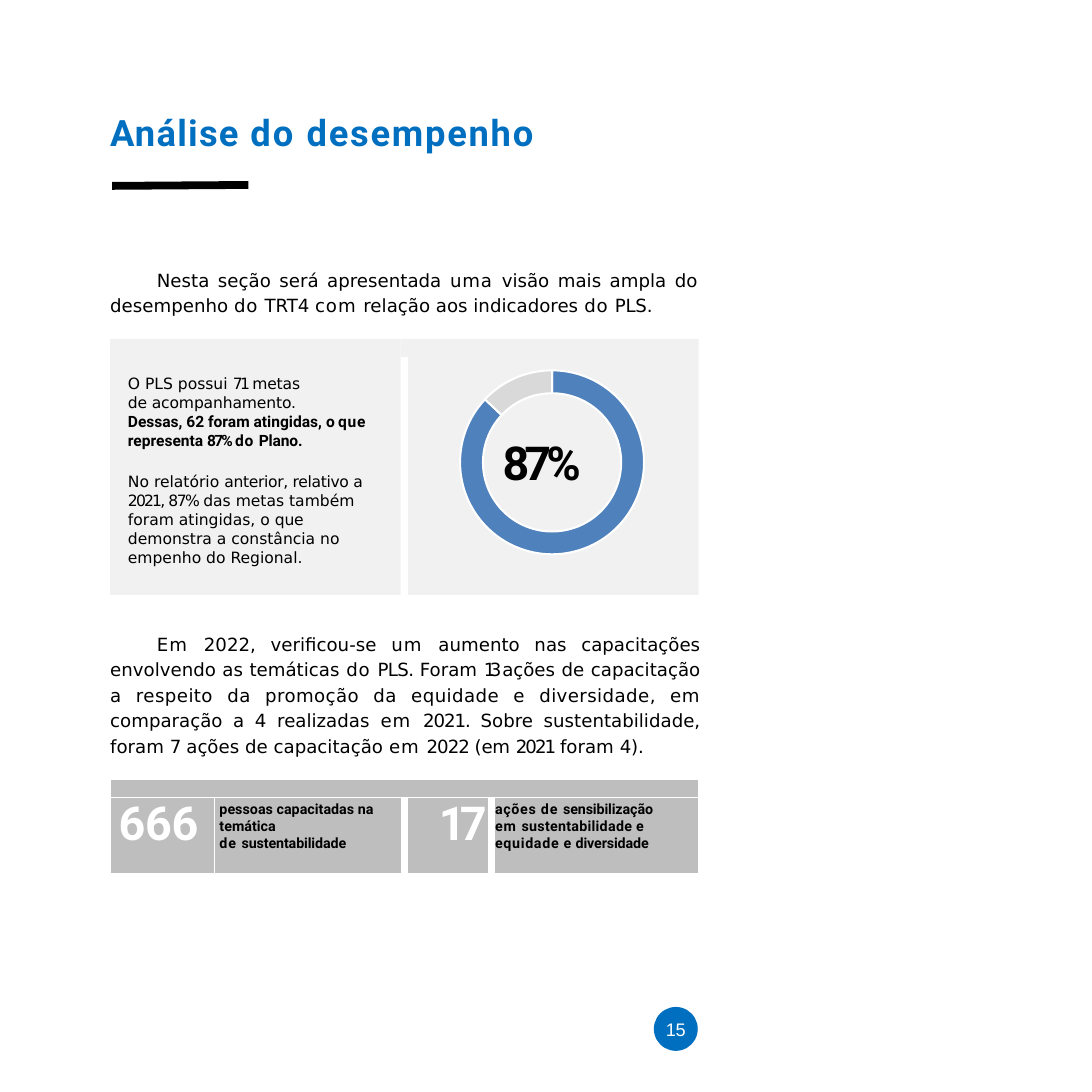
"""Build the performance analysis slide with its doughnut chart and training table."""
from dataclasses import dataclass

from lxml import etree
from pptx import Presentation
from pptx.chart.data import CategoryChartData
from pptx.dml.color import RGBColor
from pptx.enum.chart import XL_CHART_TYPE
from pptx.enum.shapes import MSO_CONNECTOR, MSO_SHAPE
from pptx.enum.text import MSO_ANCHOR, PP_ALIGN
from pptx.oxml import parse_xml
from pptx.oxml.ns import nsdecls, qn
from pptx.util import Inches, Pt

RECT, OVAL = MSO_SHAPE.RECTANGLE, MSO_SHAPE.OVAL
STRAIGHT, DOUGHNUT = MSO_CONNECTOR.STRAIGHT, XL_CHART_TYPE.DOUGHNUT
LEFT, CENTER, JUSTIFY = PP_ALIGN.LEFT, PP_ALIGN.CENTER, PP_ALIGN.JUSTIFY
MIDDLE = MSO_ANCHOR.MIDDLE
COLORS = {"blue": "006FC0", "ring": "4F81BC", "rest": "D9D9D9", "panel": "F1F1F1",
          "band": "BEBEBE", "black": "000000", "white": "FFFFFF"}
BODY, HEAD = "DejaVu Sans", "Roboto"


@dataclass
class Par:
    runs: list[tuple[str, float]]
    size: float
    font: str = BODY
    color: str = "black"
    left: float = 0.01
    right: float = 0
    first: float = 0
    line: float | None = None
    exact: float | None = None
    align: PP_ALIGN = LEFT


@dataclass
class TextBox:
    box: tuple[float, float, float, float]
    pars: list[Par]


@dataclass
class Shape:
    kind: MSO_SHAPE
    box: tuple[float, float, float, float]
    fill: str
    outline: float = 0


PANELS = [Shape(RECT, (1.18, 3.63, 3.11, 2.74), "panel"),
          Shape(RECT, (4.29, 3.63, 0.08, 0.19), "panel"),
          Shape(RECT, (4.37, 3.63, 3.11, 2.74), "panel")]
RING_CENTER = (5.91, 4.95)
RING_SIZE, HOLE_SIZE, RING_SHARE, RING_LINE = 1.97, 1.48, 0.9, 1.56

TEXTS = [
    TextBox((1.17, 1.17, 6.56, 0.49), [
        Par([("Análise ", 1), ("do ", 1.6), ("desempenho", 1.4)], 28, HEAD, "blue")]),
    TextBox((1.17, 2.83, 6.33, 0.57), [
        Par([("Nesta seção será apresentada ", 0), ("uma ", 0.5), ("visão mais ampla do desempenho ", 0),
             ("do ", 0.5), ("TRT4 ", -0.1), ("com ", 0.7), ("relação aos indicadores ", 0),
             ("do ", 0.5), ("PLS.", -0.2)],
            14, right=0.03, first=0.5, line=1.17, align=JUSTIFY)]),
    TextBox((1.36, 3.99, 2.63, 0.84), [
        Par([("O PLS possui ", 0), ("71 ", -2), ("metas de acompanhamento.", -0.1)],
            12, right=0.65, line=1.02),
        Par([("Dessas, 62 foram atingidas, ", 0), ("o ", -0.5), ("que ", 0.6), ("representa ", 0),
             ("87% ", -1.4), ("do ", 0.6), ("Plano.", -0.1)], 12, HEAD, exact=14.6)]),
    TextBox((1.36, 5.04, 2.55, 1.04), [
        Par([("No relatório ", 0), ("anterior, relativo", -0.25), (" a ", -0.5), ("2021, ", -1.4),
             ("87% ", -1.2), ("das metas também foram atingidas, o ", 0), ("que ", -0.2),
             ("demonstra a constância no empenho do Regional.", 0)], 12, line=1.02)]),
    TextBox((1.17, 6.73, 6.33, 1.39), [
        Par([("Em ", 0.8), ("2022, verificou-se ", 0), ("um ", 0.8),
             ("aumento nas capacitações envolvendo as temáticas ", 0), ("do ", 0.5), ("PLS. ", -0.5),
             ("Foram ", 0), ("13 ", -4.3), ("ações de capacitação ", 0),
             ("a respeito da promoção da equidade e diversidade, ", 0.3),
             ("em ", 0.3), ("comparação a 4 realizadas ", 0), ("em ", 0.7), ("2021. ", -0.8),
             ("Sobre sustentabilidade, foram ", 0), ("7 ", -0.7), ("ações de capacitação ", 0),
             ("em ", 0.7), ("2022 ", -0.8), ("(em ", -0.2), ("2021 ", -1.5), ("foram ", 0), ("4).", -0.2)],
            14, first=0.5, line=1.17, align=JUSTIFY)]),
    TextBox((5.37, 4.63, 1.13, 0.63), [Par([("87%", -3.7)], 36, HEAD)]),
]

TABLE_COLS, TABLE_ROWS = (1.12, 2.03, 0.93, 2.22), (0.2, 0.81)
TABLE_CELLS = [
    [Par([("666", -0.2)], 36, HEAD, "white", left=0.09, exact=42)],
    [Par([("pessoas capacitadas na temática", 0)], 11, HEAD, left=0.05, line=1.01),
     Par([("de ", 0.7), ("sustentabilidade", -0.1)], 11, HEAD, left=0.05)],
    [Par([("17", -4.5)], 36, HEAD, "white", left=0.37, exact=42)],
    [Par([("ações ", 0.5), ("de ", 0.7), ("sensibilização ", -0.1), ("em ", 0.7),
          ("sustentabilidade e ", 0.2), ("equidade e", 0.5), (" diversidade", -0.1)],
         11, HEAD, left=0.04, right=0.42, line=1.01)],
]
CELL_BORDERS = {1: ("lnR",), 2: ("lnL", "lnR"), 3: ("lnL",)}


def rgb(name: str) -> RGBColor:
    return RGBColor.from_string(COLORS[name])


def write(tf, pars: list[Par]) -> None:
    for i, par in enumerate(pars):
        p = tf.add_paragraph() if i else tf.paragraphs[0]
        p.alignment = par.align
        if par.exact or par.line:
            p.line_spacing = Pt(par.exact) if par.exact else par.line
        pPr = p._p.get_or_add_pPr()
        for key, value in (("marL", par.left), ("marR", par.right), ("indent", par.first)):
            pPr.set(key, str(Inches(value)))
        p.font.size, p.font.name, p.font.bold = Pt(par.size), par.font, par.font == HEAD
        p.font.color.rgb = rgb(par.color)
        for text, spacing in par.runs:
            r = p.add_run()
            r.text = text
            if spacing:
                r._r.get_or_add_rPr().set("spc", str(round(spacing * 100)))


def add_text(s, item: TextBox) -> None:
    tf = s.shapes.add_textbox(*map(Inches, item.box)).text_frame
    tf.word_wrap = True
    tf.margin_left = tf.margin_right = tf.margin_bottom = 0
    tf.margin_top = Inches(0.01)
    write(tf, item.pars)


def add_shape(s, item: Shape):
    sp = s.shapes.add_shape(item.kind, *map(Inches, item.box))
    sp.shadow.inherit = False
    sp.fill.solid()
    sp.fill.fore_color.rgb = rgb(item.fill)
    if item.outline:
        sp.line.color.rgb = rgb("white")
        sp.line.width = Pt(item.outline)
    else:
        sp.line.fill.background()
    return sp


def centered(size: float) -> tuple[float, float, float, float]:
    x, y = RING_CENTER
    return x - size / 2, y - size / 2, size, size


def add_ring(s) -> None:
    data = CategoryChartData()
    data.categories = ["Atingidas", "Não atingidas"]
    data.add_series("Metas", (87, 13))
    box = map(Inches, centered(RING_SIZE / RING_SHARE))
    chart = s.shapes.add_chart(DOUGHNUT, *box, data).chart
    chart.has_legend = chart.has_title = False
    chart.font.name, chart.font.size = BODY, Pt(12)
    chart.font.color.rgb = rgb("black")
    plot = chart.plots[0]
    plot.vary_by_categories = True
    for i, color in enumerate(("ring", "rest")):
        fmt = plot.series[0].points[i].format
        fmt.fill.solid()
        fmt.fill.fore_color.rgb = rgb(color)
        fmt.line.color.rgb = rgb("white")
        fmt.line.width = Pt(RING_LINE)
    root = chart._chartSpace
    root.find(qn("c:chart")).addnext(parse_xml(
        f'<c:spPr {nsdecls("c", "a")}><a:noFill/><a:ln><a:noFill/></a:ln></c:spPr>'))
    for hole in root.iter(qn("c:holeSize")):
        hole.set("val", "75")
    area = root.find(".//" + qn("c:plotArea"))
    for old in area.findall(qn("c:layout")):
        area.remove(old)
    edge = round((1 - RING_SHARE) / 2, 2)
    places = (("x", edge), ("y", edge), ("w", RING_SHARE), ("h", RING_SHARE))
    layout = etree.Element(qn("c:layout"))
    manual = etree.SubElement(layout, qn("c:manualLayout"))
    etree.SubElement(manual, qn("c:layoutTarget"), val="inner")
    for axis in "xy":
        etree.SubElement(manual, qn(f"c:{axis}Mode"), val="edge")
    for tag, value in places:
        etree.SubElement(manual, qn(f"c:{tag}"), val=str(value))
    area.insert(0, layout)
    add_shape(s, Shape(OVAL, centered(HOLE_SIZE), "panel", RING_LINE))


def add_training_table(s) -> None:
    box = (1.18, 8.34, sum(TABLE_COLS), sum(TABLE_ROWS))
    table = s.shapes.add_table(2, 4, *map(Inches, box)).table
    for col, width in zip(table.columns, TABLE_COLS):
        col.width = Inches(width)
    for row, height in zip(table.rows, TABLE_ROWS):
        row.height = Inches(height)
    table.first_row = table.horz_banding = False
    for cell in table.iter_cells():
        cell.margin_left = cell.margin_right = cell.margin_top = cell.margin_bottom = 0
        cell.fill.solid()
        cell.fill.fore_color.rgb = rgb("band")
    for i, pars in enumerate(TABLE_CELLS):
        etree.SubElement(table.cell(0, i).text_frame.paragraphs[0]._p, qn("a:endParaRPr"), sz="800")
        cell = table.cell(1, i)
        cell.margin_top = Inches(0.04 if i % 2 else 0)
        write(cell.text_frame, pars)
        for n, side in enumerate(CELL_BORDERS.get(i, ())):
            cell._tc.get_or_add_tcPr().insert(n, parse_xml(
                f'<a:{side} {nsdecls("a")} w="{Pt(6)}"><a:solidFill>'
                f'<a:srgbClr val="{COLORS["white"]}"/></a:solidFill></a:{side}>'))
    table.cell(0, 0).merge(table.cell(0, 3))


def add_accent(s) -> None:
    line = s.shapes.add_connector(STRAIGHT, *map(Inches, (1.2, 1.99, 2.66, 1.98)))
    line.line.color.rgb = rgb("black")
    line.line.width = Pt(6)
    etree.SubElement(line._element.spPr, qn("a:effectLst"))


def add_page_number(s) -> None:
    tf = add_shape(s, Shape(OVAL, (7, 10.78, 0.47, 0.47), "blue")).text_frame
    tf.margin_left = tf.margin_right = tf.margin_top = tf.margin_bottom = 0
    tf.vertical_anchor = MIDDLE
    write(tf, [Par([("15", -0.2)], 14, "Arial", "white", left=0, align=CENTER)])


def main() -> None:
    prs = Presentation()
    prs.slide_width = prs.slide_height = Inches(11.69)
    s = prs.slides.add_slide(prs.slide_layouts[6])
    for panel in PANELS:
        add_shape(s, panel)
    add_ring(s)
    for item in TEXTS:
        add_text(s, item)
    add_training_table(s)
    add_accent(s)
    add_page_number(s)
    prs.save("out.pptx")


if __name__ == "__main__":
    main()
